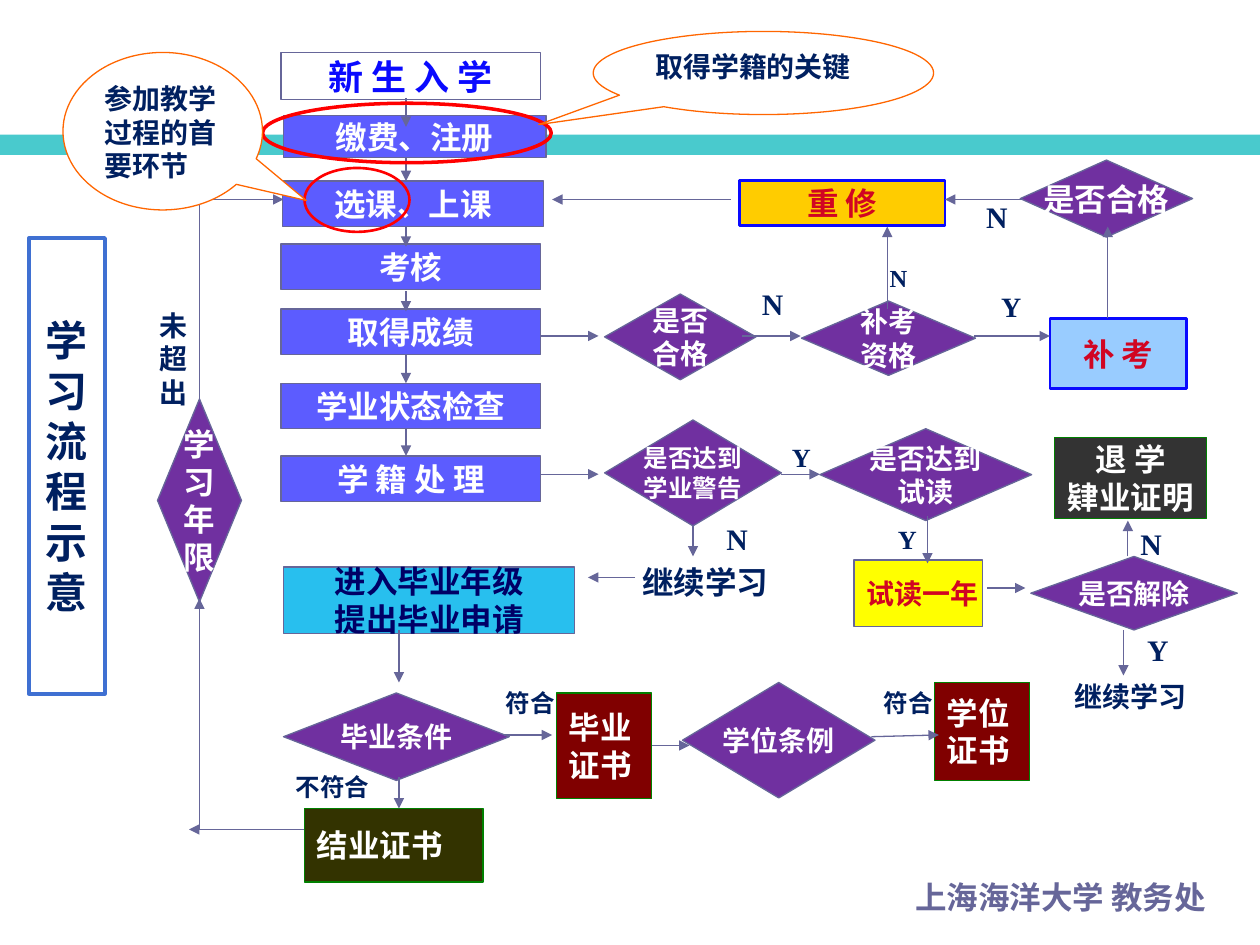
"""Build the study flow chart slide."""
import pptx
import pptx.dml.color
import pptx.enum.shapes
import pptx.enum.text
import pptx.oxml.ns
import pptx.util
from lxml import etree

Pt = pptx.util.Pt
Kind = pptx.enum.shapes.MSO_SHAPE
Mid = pptx.enum.text.MSO_ANCHOR.MIDDLE
Top = pptx.enum.text.MSO_ANCHOR.TOP
Left = pptx.enum.text.PP_ALIGN.LEFT
Center = pptx.enum.text.PP_ALIGN.CENTER
SERIF, SANS = "Times New Roman", "Arial"
HEAVY = "Noto Sans CJK SC"
WHITE, NAVY, SLATE, RED = "FFFFFF", "002060", "666699", "D10522"
GREEN, BLUE, PLUM, STEP = "008000", "0A0AFF", "7030A0", "5C5CFF"


def tint(text):
    """Turn a hex string into a colour."""
    return pptx.dml.color.RGBColor.from_string(text)


class Chart:
    """Hold the style and the current slide."""

    def __init__(self, deck):
        """Add a slide with a title."""
        self.slide = deck.slides.add_slide(deck.slide_layouts[5])
        self.shapes = self.slide.shapes

    def letter(self, shape, text, size, color, font=SERIF, align=Center,
               anchor=Mid, wrap=False):
        """Set the text of a shape, one paragraph a line."""
        frame = shape.text_frame
        frame.auto_size = pptx.enum.text.MSO_AUTO_SIZE.NONE
        frame.word_wrap = wrap
        frame.vertical_anchor = anchor
        for i, line in enumerate(text.split("\n")):
            para = frame.add_paragraph() if i else frame.paragraphs[0]
            para.alignment = align
            run = para.add_run()
            run.text = line
            run.font.name = font
            run.font.size = Pt(size)
            run.font.bold = True
            run.font.color.rgb = tint(color)

    def paint(self, shape, fill, edge, width):
        """Set fill and outline."""
        if fill:
            shape.fill.solid()
            shape.fill.fore_color.rgb = tint(fill)
        else:
            shape.fill.background()
        if edge:
            shape.line.color.rgb = tint(edge)
            shape.line.width = Pt(width)
        else:
            shape.line.fill.background()

    def title(self, text, place):
        """Turn the title into the tall frame at the side."""
        shape = self.shapes.title
        shape.left, shape.top, shape.width, shape.height = map(Pt, place)
        self.paint(shape, WHITE, "3F70D2", 2)
        self.letter(shape, text, 24, NAVY, HEAVY, wrap=True)

    def shape(self, place, kind=Kind.RECTANGLE, fill=None, edge=SLATE, width=0.75):
        """Add a preset shape."""
        shape = self.shapes.add_shape(kind, *map(Pt, place))
        shape.shadow.inherit = False
        self.paint(shape, fill, edge, width)
        return shape

    def box(self, text, place, fill, edge=SLATE, color=WHITE, size=18,
            width=0.75, font=SERIF, align=Center):
        """Add a box with text."""
        shape = self.shape(place, fill=fill, edge=edge, width=width)
        self.letter(shape, text, size, color, font, align)

    def choice(self, text, place, size=16):
        """Add a diamond with a question."""
        shape = self.shape(place, Kind.DIAMOND, PLUM)
        self.letter(shape, text, size, WHITE)

    def bubble(self, text, place, tip):
        """Add a round callout."""
        shape = self.shape(place, Kind.OVAL_CALLOUT, WHITE, "FF6600")
        shape.adjustments[0], shape.adjustments[1] = tip
        self.letter(shape, text, 16, NAVY, SANS, Left, Top, True)

    def label(self, text, place, size, color=NAVY, font=SERIF, anchor=Mid, wrap=False):
        """Add free text."""
        shape = self.shapes.add_textbox(*map(Pt, place))
        self.letter(shape, text, size, color, font, Left, anchor, wrap)

    def arrow(self, ends, head=True):
        """Add a line, with or without a head."""
        kind = pptx.enum.shapes.MSO_CONNECTOR.STRAIGHT
        line = self.shapes.add_connector(kind, *map(Pt, ends))
        line.line.color.rgb = tint(SLATE)
        line.line.width = Pt(0.75)
        name = pptx.oxml.ns.qn
        props = line.element.spPr
        if head:
            tail = etree.SubElement(props.find(name("a:ln")), name("a:tailEnd"))
            tail.set("type", "triangle")
        etree.SubElement(props, name("a:effectLst"))


def main():
    """Draw the slide and save it."""
    deck = pptx.Presentation()
    deck.slide_width, deck.slide_height = Pt(720), Pt(540)
    chart = Chart(deck)
    chart.title("学习流程示意", (16.5, 136, 43.5, 260.5))
    chart.shape((0, 77, 720, 11.5), fill="49CACD", edge=None)

    chart.box("新 生 入 学", (160.5, 30, 148.5, 27), WHITE, color=BLUE, size=20)
    chart.box("缴费、注册", (162, 66, 150, 24), STEP)
    for text, top in (("考核", 139.5), ("取得成绩", 176.5),
                      ("学业状态检查", 219), ("学 籍 处 理", 260.5)):
        chart.box(text, (160.5, top, 148.5, 26), STEP)

    for text, place in (
            ("学位条例", (390, 390, 110, 66)),
            ("毕业条件", (162, 396, 129, 50)),
            ("补考\n资格", (458, 172, 99.5, 42.5)),
            ("是否\n合格", (345.5, 168, 86.5, 49)),
            ("是否达到\n试读", (468.5, 245, 121, 52.5)),
            ("是否解除", (589, 318, 118, 42))):
        chart.choice(text, place)
    chart.choice("是否合格", (583, 91.5, 98.5, 44), 18)
    chart.choice("是否达到\n学业警告", (345.5, 240, 101, 60.5), 14)
    chart.choice("学\n习\n年\n限", (90, 228, 48, 116), 18)

    for text, place, fill in (
            ("结业证书", (174, 462, 102, 42), "333300"),
            ("毕业\n证书", (318, 396, 54.5, 60.5), "800000"),
            ("学位\n证书", (534, 390, 54.5, 56), "800000")):
        chart.box(text, place, fill, GREEN, align=Left)
    chart.box("退 学\n肄业证明", (602.5, 250, 87, 46.5), "333333", GREEN)
    chart.box("重 修", (422.5, 103, 117.5, 26), "FFCC00", BLUE, RED, width=1.5)
    chart.box("补 考", (600, 182, 78, 40), "99CCFF", BLUE, RED, width=1.5)
    chart.box("试读一年", (488, 320, 73.5, 38), "FFFF00", color=RED, size=16, align=Left)
    chart.box("进入毕业年级\n提出毕业申请", (162, 324, 166.5, 38), "28BFEE",
              color="000066", font=SANS)

    for text, place, size in (
            ("符合", (282, 396, 29, 11), 14),
            ("符合", (498, 396, 29, 11), 14),
            ("不符合", (162, 444, 38, 11), 14),
            ("N", (507, 150.5, 8.5, 16.5), 14),
            ("N", (556.5, 119, 16.5, 10), 17),
            ("N", (434, 165.5, 8.5, 16.5), 17),
            ("N", (408, 300, 16.5, 16), 17),
            ("N", (644.5, 302.5, 16.5, 16), 17),
            ("Y", (565, 165.5, 24, 19), 16),
            ("Y", (506, 302.5, 17, 11), 15),
            ("Y", (445.5, 255.5, 17, 11), 15),
            ("Y", (648.5, 366, 17, 11), 17),
            ("未\n超\n出", (84, 180, 24, 50), 16)):
        chart.label(text, place, size)
    chart.label("继续学习", (607, 384.5, 96.5, 26.5), 16, anchor=Top, wrap=True)
    chart.label("继续学习", (360, 318, 98.5, 29), 18, anchor=Top, wrap=True)
    chart.label("上海海洋大学 教务处", (516, 498, 186, 25), 18, SLATE, HEAVY, Top, True)

    for x, top, end in (
            (232, 56, 72.5), (232, 89.5, 103.5), (232, 124.5, 141),
            (232, 166.5, 178), (232, 203, 219), (232, 245, 260.5),
            (228, 444, 462), (228, 360, 390), (507, 176.5, 129.5),
            (633, 182, 129.5), (530, 295, 322), (644.5, 318, 297.5),
            (642, 360, 386), (396, 300, 318), (114, 474, 342)):
        chart.arrow((x, top, x, end))
    for y, start, end in (
            (420, 288, 315.5), (426, 372.5, 394), (114, 417.5, 315.5),
            (192, 309, 342), (192, 424, 457.5), (192, 556.5, 600),
            (114, 584, 540), (271, 309, 342), (271, 446.5, 468.5),
            (336, 564, 586), (330, 363, 336), (474, 174, 108), (114, 138, 162)):
        chart.arrow((start, y, end, y))
    chart.arrow((498, 421, 536.5, 420))
    chart.arrow((114, 228, 114, 114), False)
    chart.arrow((114, 114, 138, 114), False)

    chart.box("选课、上课", (161.5, 103.5, 149, 26), STEP)
    chart.shape((174, 96, 60, 36.5), Kind.OVAL, edge="FF0000", width=1.5)
    chart.shape((150, 59, 165, 34), Kind.OVAL, edge="FF0000", width=2)
    chart.bubble("取得学籍的关键", (339, 18, 194.5, 47.5), (-0.66, 0.62))
    chart.bubble("参加教学过程的首要环节", (36, 30, 114, 90), (0.72, 0.44))
    deck.save("out.pptx")


if __name__ == "__main__":
    main()
